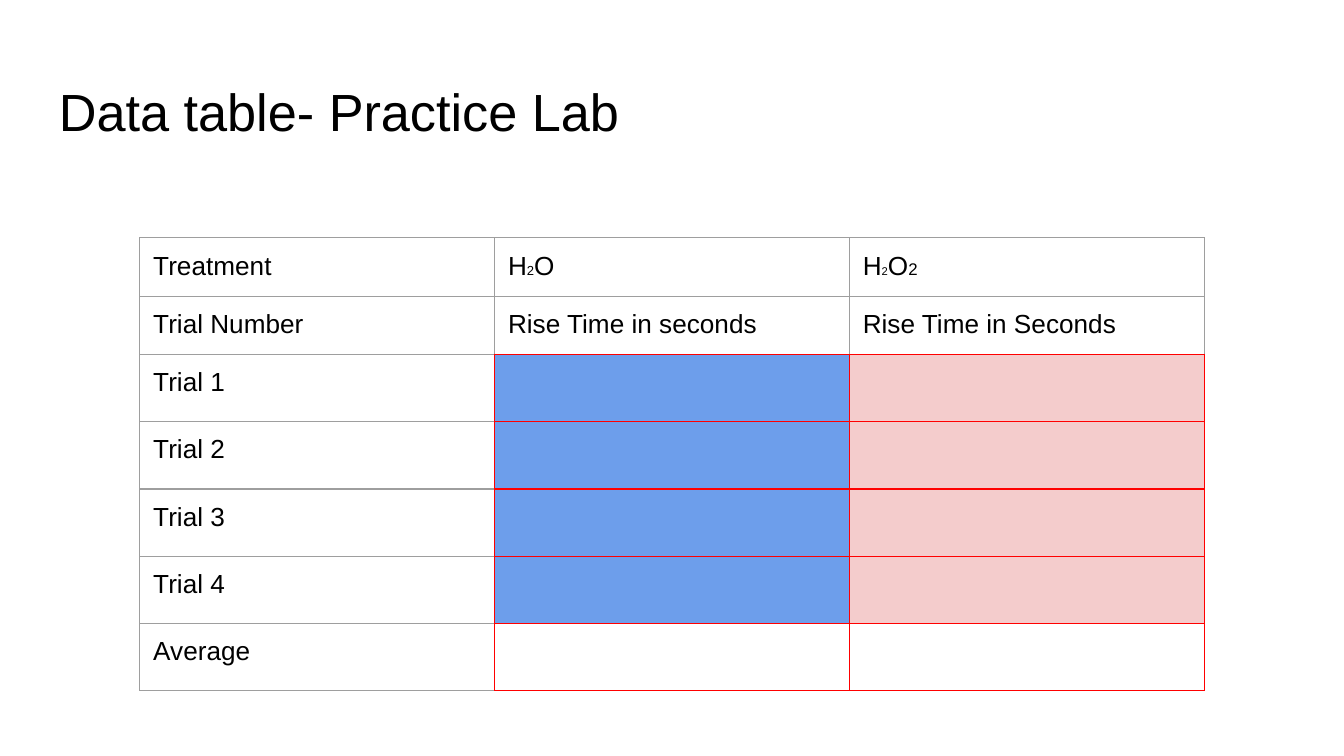
import pptx
import pptx.dml.color
import pptx.oxml.ns
import pptx.util
from lxml import etree

Inches = pptx.util.Inches
Pt = pptx.util.Pt
RGBColor = pptx.dml.color.RGBColor
qn = pptx.oxml.ns.qn

BLACK = RGBColor(0x00, 0x00, 0x00)
GREY = RGBColor(0x9E, 0x9E, 0x9E)
RED = RGBColor(0xFF, 0x00, 0x00)
BLUE = RGBColor(0x6D, 0x9E, 0xEB)
PINK = RGBColor(0xF4, 0xCC, 0xCC)

FONT = "Arial"
TITLE = "Data table- Practice Lab"
TITLE_SIZE = 28
BODY_SIZE = 14

ROWS = [
    [[("Treatment", 14)],
     [("H", 14), ("2", 7), ("O", 14)],
     [("H", 14), ("2", 6), ("O", 14), ("2", 9)]],
    [[("Trial Number", 14)],
     [("Rise Time in seconds", 14)],
     [("Rise Time in Seconds", 14)]],
]
ROWS += [[[(label, BODY_SIZE)], [], []]
         for label in ("Trial 1", "Trial 2", "Trial 3", "Trial 4", "Average")]
HEADER_ROWS = 2
AVERAGE_ROW = len(ROWS) - 1
FILLS = {1: BLUE, 2: PINK}

LEFT, TOP = 1.04, 1.77
FRAME_SIZE = 3.28
COL_WIDTH = 2.64
ROW_HEIGHTS = [0.42, 0.42, 0.42, 0.42, 0.38, 0.42, 0.42]
INSET = Inches(0.1)
BORDER = Pt(0.75)


def add_runs(p, runs):
    for text, size in runs:
        r = p.add_run()
        r.text = text
        r.font.name = FONT
        r.font.size = Pt(size)
        r.font.color.rgb = BLACK


def set_insets(box):
    box.margin_left = box.margin_right = INSET
    box.margin_top = box.margin_bottom = INSET


def is_entry(row, col):
    return row >= HEADER_ROWS and col > 0


def border_colors(row, col):
    if is_entry(row, col):
        return {"L": RED, "R": RED, "T": RED, "B": RED}
    return {
        "L": GREY,
        "R": RED if is_entry(row, col + 1) else GREY,
        "T": GREY,
        "B": RED if is_entry(row + 1, col) else GREY,
    }


def set_borders(cell, colors):
    tc_pr = cell._tc.get_or_add_tcPr()
    for side, color in colors.items():
        ln = etree.SubElement(tc_pr, qn("a:ln" + side), w=str(BORDER))
        fill = etree.SubElement(ln, qn("a:solidFill"))
        etree.SubElement(fill, qn("a:srgbClr"), val=str(color))


def add_title(s):
    sp = s.shapes.add_textbox(Inches(0.34), Inches(0.49), Inches(9.32), Inches(0.63))
    tf = sp.text_frame
    tf.word_wrap = True
    set_insets(tf)
    add_runs(tf.paragraphs[0], [(TITLE, TITLE_SIZE)])


def add_data_table(s):
    frame = s.shapes.add_table(
        len(ROWS), len(ROWS[0]), Inches(LEFT), Inches(TOP),
        Inches(FRAME_SIZE), Inches(FRAME_SIZE))
    table = frame.table
    table.first_row = False
    table.horz_banding = False
    for column in table.columns:
        column.width = Inches(COL_WIDTH)
    for i, row in enumerate(ROWS):
        table.rows[i].height = Inches(ROW_HEIGHTS[i])
        for j, runs in enumerate(row):
            cell = table.cell(i, j)
            set_insets(cell)
            set_borders(cell, border_colors(i, j))
            if is_entry(i, j) and i < AVERAGE_ROW:
                cell.fill.solid()
                cell.fill.fore_color.rgb = FILLS[j]
            else:
                cell.fill.background()
            add_runs(cell.text_frame.paragraphs[0], runs)
    frame.width = frame.height = Inches(FRAME_SIZE)


def main():
    prs = pptx.Presentation()
    prs.slide_width = Inches(10)
    prs.slide_height = prs.slide_width * 9 // 16
    s = prs.slides.add_slide(prs.slide_layouts[6])
    add_title(s)
    add_data_table(s)
    prs.save("out.pptx")


if __name__ == "__main__":
    main()
